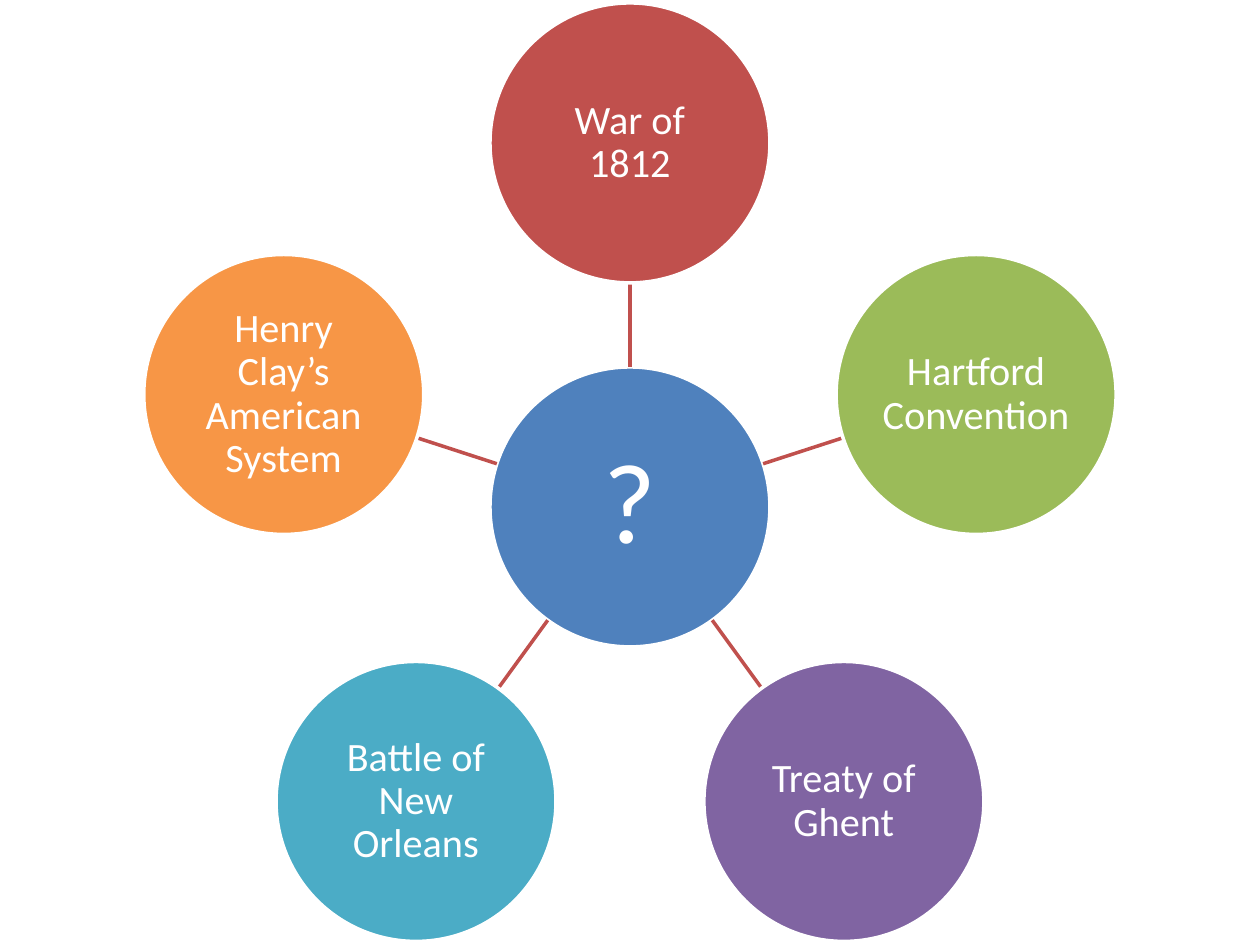
import math

from lxml import etree
from pptx import Presentation
from pptx import util as u
from pptx.dml.color import RGBColor
from pptx.enum import shapes, text
from pptx.oxml import ns

SCALE = 914400 / 126
WHITE = RGBColor(0xFF, 0xFF, 0xFF)
BLUE = RGBColor(0x4F, 0x81, 0xBD)
RED = RGBColor(0xC0, 0x50, 0x4D)
GREEN = RGBColor(0x9B, 0xBB, 0x59)
PURPLE = RGBColor(0x80, 0x64, 0xA2)
TEAL = RGBColor(0x4B, 0xAC, 0xC6)
ORANGE = RGBColor(0xF7, 0x96, 0x46)

HUB = (630, 507)
REACH = 364
RADIUS = 140
TOPICS = [
    ("War of 1812", RED),
    ("Hartford Convention", GREEN),
    ("Treaty of Ghent", PURPLE),
    ("Battle of New Orleans", TEAL),
    ("Henry Clay’s American System", ORANGE),
]


def px(n):
    return u.Emu(round(n * SCALE))


def polar(angle, dist):
    return HUB[0] + dist * math.sin(angle), HUB[1] - dist * math.cos(angle)


def add_circle(slide, center, label, color, size, inset):
    left, top = (px(c - RADIUS) for c in center)
    circle = slide.shapes.add_shape(
        shapes.MSO_SHAPE.OVAL, left, top, px(2 * RADIUS), px(2 * RADIUS))
    circle.shadow.inherit = False
    circle.fill.solid()
    circle.fill.fore_color.rgb = color
    circle.line.color.rgb = WHITE
    circle.line.width = u.Pt(2)
    frame = circle.text_frame
    frame.word_wrap = True
    frame.vertical_anchor = text.MSO_ANCHOR.MIDDLE
    frame.margin_left = frame.margin_right = px(inset)
    frame.margin_top = frame.margin_bottom = px(inset)
    frame.text = label
    para = frame.paragraphs[0]
    para.alignment = text.PP_ALIGN.CENTER
    para.line_spacing = 0.9
    para.font.name = "Calibri"
    para.font.size = u.Pt(size)
    para.font.color.rgb = WHITE


def add_spoke(slide, angle):
    start = polar(angle, RADIUS)
    end = polar(angle, REACH - RADIUS)
    spoke = slide.shapes.add_connector(
        shapes.MSO_CONNECTOR.STRAIGHT, *map(px, start + end))
    spoke.line.color.rgb = RED
    spoke.line.width = u.Pt(2)
    etree.SubElement(spoke._element.spPr, ns.qn("a:effectLst"))


def main():
    deck = Presentation()
    deck.slide_width, deck.slide_height = px(1260), px(945)
    slide = deck.slides.add_slide(deck.slide_layouts[6])
    add_circle(slide, HUB, "?", BLUE, 65, 6)
    for i, (label, color) in enumerate(TOPICS):
        angle = i * math.tau / len(TOPICS)
        add_spoke(slide, angle)
        add_circle(slide, polar(angle, REACH), label, color, 23, 2)
    deck.save("out.pptx")


if __name__ == "__main__":
    main()
